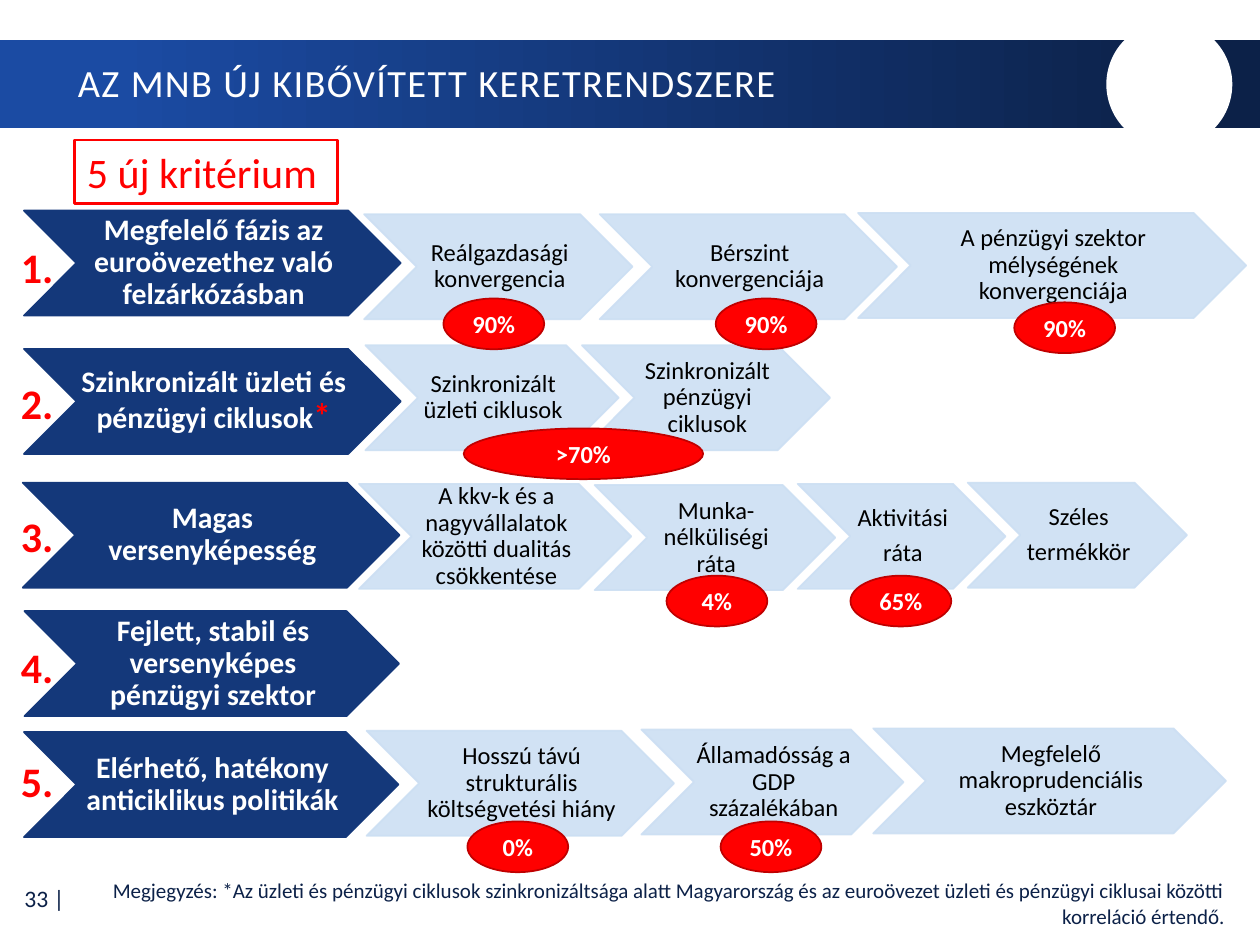
import pptx
import pptx.dml.color
import pptx.enum.shapes
import pptx.enum.text
import pptx.oxml.ns
import pptx.util
from lxml import etree

Pt = pptx.util.Pt
Shape = pptx.enum.shapes.MSO_SHAPE
Align = pptx.enum.text.PP_ALIGN
Anchor = pptx.enum.text.MSO_ANCHOR

WHITE, BLACK, RED, DARK_RED = "FFFFFF", "000000", "FF0000", "C00000"
NAVY, INK, BRIGHT, PALE = "14387A", "0C2148", "1B4BA3", "CCDFF3"
DEFAULT_INSETS = (7.2, 3.6, 7.2, 3.6)
CHEVRON_INSETS = (1.5, 0.75, 0, 0.75)


def color(code):
    return pptx.dml.color.RGBColor.from_string(code)


class SlideBuilder:
    font = "Calibri"
    chevron_height = 60

    def __init__(self, page):
        self.page = page

    def shape(self, kind, left, top, width, height, fill=None, line=None, weight=1):
        shape = self.page.shapes.add_shape(
            kind, Pt(left), Pt(top), Pt(width), Pt(height))
        shape.shadow.inherit = False
        if fill:
            shape.fill.solid()
            shape.fill.fore_color.rgb = color(fill)
        else:
            shape.fill.background()
        if line:
            shape.line.color.rgb = color(line)
            shape.line.width = Pt(weight)
        else:
            shape.line.fill.background()
        return shape

    def style(self, span, size, ink, bold=False):
        span.font.name = self.font
        span.font.size = Pt(size)
        span.font.bold = bold
        span.font.color.rgb = color(ink)

    def label(self, shape, text, size, ink, bold=False, align=Align.LEFT,
              anchor=Anchor.TOP, insets=DEFAULT_INSETS, spacing=None, after=0):
        frame = shape.text_frame
        frame.word_wrap = True
        frame.vertical_anchor = anchor
        (frame.margin_left, frame.margin_top,
         frame.margin_right, frame.margin_bottom) = map(Pt, insets)
        frame.text = text
        for para in frame.paragraphs:
            para.alignment = align
            para.space_after = Pt(after)
            if spacing:
                para.line_spacing = spacing
            for span in para.runs:
                self.style(span, size, ink, bold)
        return frame

    def text(self, left, top, width, height, *content, **options):
        box = self.page.shapes.add_textbox(Pt(left), Pt(top), Pt(width), Pt(height))
        return self.label(box, *content, **options)

    def banner(self, left, top, width, height):
        band = self.shape(Shape.RECTANGLE, left, top, width, height)
        band.fill.gradient()
        band.fill.gradient_angle = 0
        for stop, (position, code) in zip(band.fill.gradient_stops,
                                          ((0.09, BRIGHT), (0.95, INK))):
            stop.position = position
            stop.color.rgb = color(code)

    def chevron(self, left, top, width, text, main=False):
        fill = NAVY if main else PALE
        arrow = self.shape(Shape.CHEVRON, left, top, width, self.chevron_height, fill, fill)
        if not main:
            for tint in arrow._element.spPr.iter(pptx.oxml.ns.qn("a:srgbClr")):
                etree.SubElement(tint, pptx.oxml.ns.qn("a:alpha"), val="90000")
        notch = self.chevron_height / 2
        return self.text(
            left + notch, top, width - 2 * notch, self.chevron_height, text,
            17 if main else 14, WHITE if main else BLACK, bold=main,
            align=Align.CENTER, anchor=Anchor.MIDDLE, insets=CHEVRON_INSETS,
            spacing=0.9, after=5)

    def badge(self, left, top, text, width=57.6):
        oval = self.shape(Shape.OVAL, left, top, width, 29, RED, DARK_RED)
        self.label(oval, text, 14, WHITE, bold=True, align=Align.CENTER,
                   anchor=Anchor.MIDDLE, insets=(0, 0, 0, 0))


# Each row: left, top and width of the main chevron, its text, top of the number,
# then the criteria as (left, top, width, text)
ROWS = [
    (13.7, 120.3, 215.3, "Megfelelő fázis az euroövezethez való felzárkózásban", 134.6, [
        (208.1, 122.4, 153.4, "Reálgazdasági konvergencia"),
        (342.7, 122.4, 169.9, "Bérszint konvergenciája"),
        (490.3, 121.7, 221.8, "A pénzügyi szektor mélységének konvergenciája")]),
    (13.7, 199.4, 215.3, "Szinkronizált üzleti és pénzügyi ciklusok", 212.4, [
        (208.8, 197.3, 144.7, "Szinkronizált üzleti ciklusok"),
        (332.6, 197.3, 141.8, "Szinkronizált pénzügyi ciklusok")]),
    (13, 275.8, 215.3, "Magas versenyképesség", 288, [
        (205.2, 276.5, 155.5, "A kkv-k és a nagyvállalatok közötti dualitás csökkentése"),
        (339.8, 277.2, 137.5, "Munka-nélküliségi ráta"),
        (455.8, 276.5, 118.8, "Aktivitási\nráta"),
        (553, 275.8, 125.3, "Széles\ntermékkör")]),
    (14, 349.2, 214, "Fejlett, stabil és versenyképes pénzügyi szektor", 362.9, []),
    (13.7, 418.3, 214, "Elérhető, hatékony anticiklikus politikák", 428.4, [
        (209.5, 417.6, 175.7, "Hosszú távú strukturális költségvetési hiány"),
        (366.5, 416.9, 149.8, "Államadósság a GDP százalékában"),
        (499, 416.2, 201.6, "Megfelelő makroprudenciális eszköztár")]),
]
BADGES = [
    (253.4, 170.6, "90%"), (409, 170.6, "90%"), (579.6, 172.8, "90%"),
    (380.9, 329, "4%"), (486, 329, "65%"),
    (267.1, 469.4, "0%"), (411.8, 469.4, "50%"),
    (265, 244.8, ">70%", 136.8),
]
NOTE = ("Megjegyzés: *Az üzleti és pénzügyi ciklusok szinkronizáltsága alatt "
        "Magyarország és az euroövezet üzleti és pénzügyi ciklusai közötti "
        "korreláció értendő.")


def main():
    deck = pptx.Presentation()
    deck.slide_width, deck.slide_height = Pt(720), Pt(540)
    builder = SlideBuilder(deck.slides.add_slide(deck.slide_layouts[6]))

    # Header band with title
    builder.banner(0, 23, 720, 50.4)
    builder.shape(Shape.OVAL, 632.2, 12.2, 72, 72, WHITE)
    title = builder.text(37.4, 24.5, 599, 48.2, "AZ MNB ÚJ KIBŐVÍTETT KERETRENDSZERE",
                         22, WHITE, anchor=Anchor.MIDDLE, spacing=0.9)
    title.paragraphs[0].runs[0].font._element.set("spc", "80")

    # Rows of criteria
    for number, (left, top, width, text, number_top, criteria) in enumerate(ROWS, 1):
        frame = builder.chevron(left, top, width, text, main=True)
        if number == 2:
            star = frame.paragraphs[0].add_run()
            star.text = "*"
            builder.style(star, 20, RED, bold=True)
        for criterion in criteria:
            builder.chevron(*criterion)
        builder.text(4.9, number_top, 37.4, 36, f"{number}.", 24, RED, bold=True)

    # Threshold values
    for badge in BADGES:
        builder.badge(*badge)

    # Heading box
    heading = builder.shape(Shape.RECTANGLE, 42.5, 80, 150.5, 36.3, line=RED, weight=1.5)
    builder.label(heading, "5 új kritérium", 24, RED)

    # Page number and note
    builder.text(0.7, 499.7, 43.2, 26.6, "33 |", 13.5, INK,
                 align=Align.RIGHT, anchor=Anchor.MIDDLE)
    builder.text(37.4, 498.2, 669.6, 36, NOTE, 12, INK, align=Align.RIGHT)

    deck.save("out.pptx")


if __name__ == "__main__":
    main()
